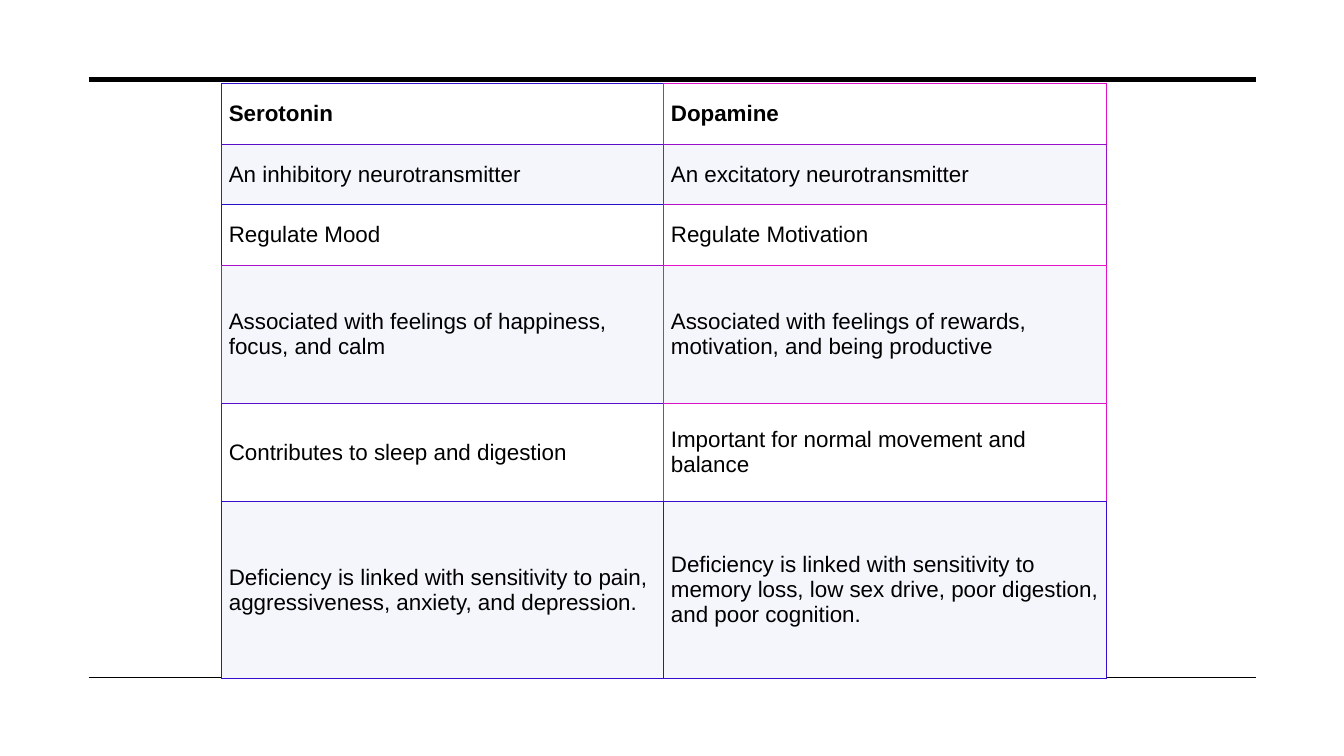
from lxml import etree
from pptx import Presentation
from pptx.dml.color import RGBColor
from pptx.enum import shapes, text
from pptx.oxml.ns import qn
from pptx.util import Inches, Pt

FONT = "Arial"
RULES = [(0.79, 3.5), (6.72, 1)]  # height on the page, line width
RULE_LEFT, RULE_RIGHT = 0.88, 12.46
TABLE_LEFT, TABLE_TOP = 2.2, 0.83
COLUMN_WIDTH = 4.385
MARGIN = 0.07
BANDS = ["FFFFFF", "F4F6FC"]
LAST_EDGE = "380CCA"

# row height, texts, colours of the edge above each cell
ROWS = [
    (0.6, ("Serotonin", "Dopamine"), ("380FCA", "D811CA")),
    (0.6, ("An inhibitory neurotransmitter", "An excitatory neurotransmitter"),
     ("580DCA", "980FCA")),
    (0.6, ("Regulate Mood", "Regulate Motivation"), ("2810CA", "B810CA")),
    (1.37, ("Associated with feelings of happiness, focus, and calm",
            "Associated with feelings of rewards, motivation, and being productive"),
     ("A811CA", "E810CA")),
    (0.98, ("Contributes to sleep and digestion",
            "Important for normal movement and balance"), ("580DCA", "D811CA")),
    (1.75, ("Deficiency is linked with sensitivity to pain, aggressiveness, "
            "anxiety, and depression.",
            "Deficiency is linked with sensitivity to memory loss, low sex drive, "
            "poor digestion, and poor cognition."), (LAST_EDGE, LAST_EDGE)),
]


def color(value):
    return RGBColor.from_string(value)


def add_rule(page, y, width):
    rule = page.shapes.add_connector(
        shapes.MSO_CONNECTOR.STRAIGHT,
        Inches(RULE_LEFT), Inches(y), Inches(RULE_RIGHT), Inches(y))
    rule.line.color.rgb = color("000000")
    rule.line.width = Pt(width)
    etree.SubElement(rule._element.spPr, qn("a:effectLst"))


def write(cell, words, size=16, bold=False, ink="000000"):
    cell.vertical_anchor = text.MSO_ANCHOR.MIDDLE
    cell.margin_left = cell.margin_right = Inches(MARGIN)
    cell.margin_top = cell.margin_bottom = Inches(MARGIN)
    span = cell.text_frame.paragraphs[0].add_run()
    span.text = words
    span.font.name = FONT
    span.font.size = Pt(size)
    span.font.bold = bold
    span.font.color.rgb = color(ink)


def set_borders(cell, left, right, top, bottom, width=0.75):
    """Insert the four edges ahead of the fill, as the schema requires."""
    properties = cell._tc.get_or_add_tcPr()
    edges = [("a:lnL", left), ("a:lnR", right), ("a:lnT", top), ("a:lnB", bottom)]
    for place, (tag, value) in enumerate(edges):
        edge = etree.Element(qn(tag), w=str(Pt(width)))
        fill = etree.SubElement(edge, qn("a:solidFill"))
        etree.SubElement(fill, qn("a:srgbClr"), val=value)
        properties.insert(place, edge)


def add_comparison(page):
    height = sum(row[0] for row in ROWS)
    table = page.shapes.add_table(
        len(ROWS), 2, Inches(TABLE_LEFT), Inches(TABLE_TOP),
        Inches(2 * COLUMN_WIDTH), Inches(height)).table
    for column in table.columns:
        column.width = Inches(COLUMN_WIDTH)
    edges_above = [row[2] for row in ROWS] + [(LAST_EDGE, LAST_EDGE)]
    for r, (row_height, words, above) in enumerate(ROWS):
        table.rows[r].height = Inches(row_height)
        for c in range(2):
            cell = table.cell(r, c)
            write(cell, words[c], bold=r == 0)
            cell.fill.solid()
            cell.fill.fore_color.rgb = color(BANDS[r % 2])
            set_borders(cell, left=above[c], right=above[1],
                        top=above[c], bottom=edges_above[r + 1][c])


def main():
    deck = Presentation()
    deck.slide_width, deck.slide_height = Inches(13.33), Inches(7.5)
    page = deck.slides.add_slide(deck.slide_layouts[6])
    for y, width in RULES:
        add_rule(page, y, width)
    add_comparison(page)
    deck.save("out.pptx")


if __name__ == "__main__":
    main()
